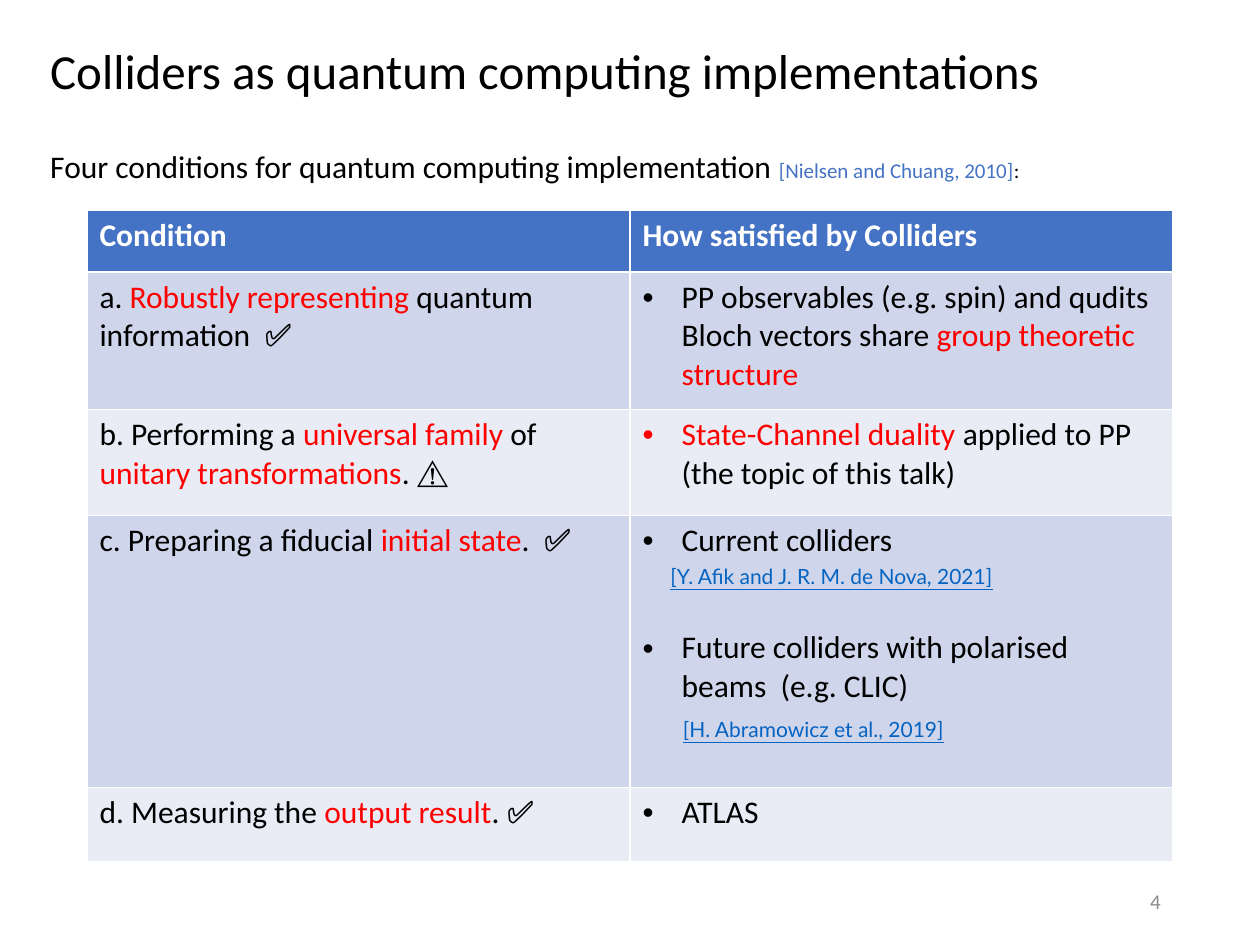
from lxml.etree import SubElement
from pptx import Presentation
from pptx.dml.color import RGBColor
from pptx.enum.text import MSO_ANCHOR as Anchor, PP_ALIGN as Align
from pptx.oxml.ns import qn
from pptx.util import Inches, Pt

BLACK, RED, BLUE = "000000", "FF0000", "4472C4"
STYLES = {
    "body": {"size": 18, "color": BLACK},
    "key": {"size": 18, "color": RED},
    "mark": {"size": 18, "color": BLACK, "bold": True},
    "header": {"size": 18, "color": "FFFFFF", "bold": True},
    "title": {"size": 28, "color": BLACK},
    "cite": {"size": 12, "color": BLUE},
    "small": {"size": 12, "color": BLACK},
    "number": {"size": 12, "color": "8C8C8C"},
    "link": {"size": 12, "color": "0563C1", "underline": True, "name": "Lato"},
}

# Each paragraph is a list of (text, style) runs.
TITLE = [("Colliders as quantum computing implementations", "title")]
INTRO = [("Four conditions for quantum computing implementation ", "body"),
         ("[Nielsen and Chuang, 2010]", "cite"), (":", "small")]
PAGE_NUMBER = [("4", "number")]
HEADERS = ["Condition", "How satisfied by Colliders"]

# Row height, condition runs, then answer paragraphs as (runs, layout).
BULLET = {"bullet": True, "indent": 0.31}
CONDITIONS = [
    (1.09,
     [("a. ", "body"), ("Robustly representing ", "key"),
      ("quantum information  ", "body"), ("✅", "mark")],
     [([("PP observables (e.g. spin) and qudits Bloch vectors share ", "body"),
        ("group theoretic structure", "key")], BULLET)]),
    (0.84,
     [("b. Performing a ", "body"), ("universal family ", "key"), ("of ", "body"),
      ("unitary transformations", "key"), (". ⚠️", "body")],
     [([("State-Channel duality ", "key"),
        ("applied to PP (the topic of this talk)", "body")], BULLET)]),
    (2.16,
     [("c. Preparing a fiducial", "body"), (" initial state", "key"),
      (".  ", "body"), ("✅", "mark")],
     [([("Current colliders", "body")], BULLET),
      ([("[Y. Afik and J. R. M. de Nova, 2021]", "link")],
       {"indent": 0.22, "before": 2}),
      ([("Future colliders with polarised beams  (e.g. CLIC)", "body")],
       {**BULLET, "before": 23}),
      ([("[H. Abramowicz et al., 2019]", "link")],
       {"indent": 0.32, "before": 6})]),
    (0.59,
     [("d. Measuring the ", "body"), ("output result", "key"),
      (". ", "body"), ("✅", "mark")],
     [([("ATLAS", "body")], BULLET)]),
]
HEADER_HEIGHT, COLUMN_WIDTH = 0.49, 4.31
BANDS = ["CFD5EA", "E9EBF5"]


def rgb(value):
    return RGBColor.from_string(value)


def write_runs(paragraph, runs):
    for text, style in runs:
        run = paragraph.add_run()
        run.text = text
        values = {"name": "Calibri", "bold": False, **STYLES[style]}
        run.font.color.rgb = rgb(values.pop("color"))
        values["size"] = Pt(values["size"])
        for attribute, value in values.items():
            setattr(run.font, attribute, value)


def set_layout(paragraph, indent=0, before=0, bullet=False):
    paragraph.space_before = Pt(before)
    properties = paragraph._p.get_or_add_pPr()
    properties.set("marL", str(Inches(indent)))
    properties.set("indent", str(-Inches(indent) if bullet else 0))
    if bullet:
        SubElement(properties, qn("a:buFont"), typeface="Arial")
        SubElement(properties, qn("a:buChar"), char="•")


def add_text(slide, box, runs, wrap=True, anchor=Anchor.TOP, align=Align.LEFT, spacing=1.0):
    frame = slide.shapes.add_textbox(*map(Inches, box)).text_frame
    frame.word_wrap = wrap
    frame.vertical_anchor = anchor
    paragraph = frame.paragraphs[0]
    paragraph.alignment = align
    paragraph.line_spacing = spacing
    write_runs(paragraph, runs)


def fill_cell(cell, color, paragraphs):
    cell.fill.solid()
    cell.fill.fore_color.rgb = rgb(color)
    frame = cell.text_frame
    for i, (runs, layout) in enumerate(paragraphs):
        paragraph = frame.add_paragraph() if i else frame.paragraphs[0]
        set_layout(paragraph, **layout)
        write_runs(paragraph, runs)


def add_conditions(slide):
    heights = [HEADER_HEIGHT] + [height for height, _, _ in CONDITIONS]
    table = slide.shapes.add_table(
        len(heights), len(HEADERS), Inches(0.69), Inches(1.67),
        Inches(COLUMN_WIDTH * len(HEADERS)), Inches(sum(heights))).table
    for column in table.columns:
        column.width = Inches(COLUMN_WIDTH)
    for row, height in zip(table.rows, heights):
        row.height = Inches(height)
    for column, header in enumerate(HEADERS):
        fill_cell(table.cell(0, column), BLUE, [([(header, "header")], {})])
    for i, (_, condition, answer) in enumerate(CONDITIONS):
        band = BANDS[i % len(BANDS)]
        fill_cell(table.cell(i + 1, 0), band, [(condition, {})])
        fill_cell(table.cell(i + 1, 1), band, answer)


def main():
    deck = Presentation()
    deck.slide_width, deck.slide_height = Inches(10), Inches(7.5)
    slide = deck.slides.add_slide(deck.slide_layouts[6])
    add_text(slide, (0.3, 0.2, 8.62, 0.77), TITLE, anchor=Anchor.MIDDLE, spacing=0.9)
    add_conditions(slide)
    add_text(slide, (0.3, 1.12, 8.02, 0.4), INTRO, wrap=False)
    add_text(slide, (7.06, 6.95, 2.25, 0.4), PAGE_NUMBER,
             anchor=Anchor.MIDDLE, align=Align.RIGHT)
    deck.save("out.pptx")


if __name__ == "__main__":
    main()
